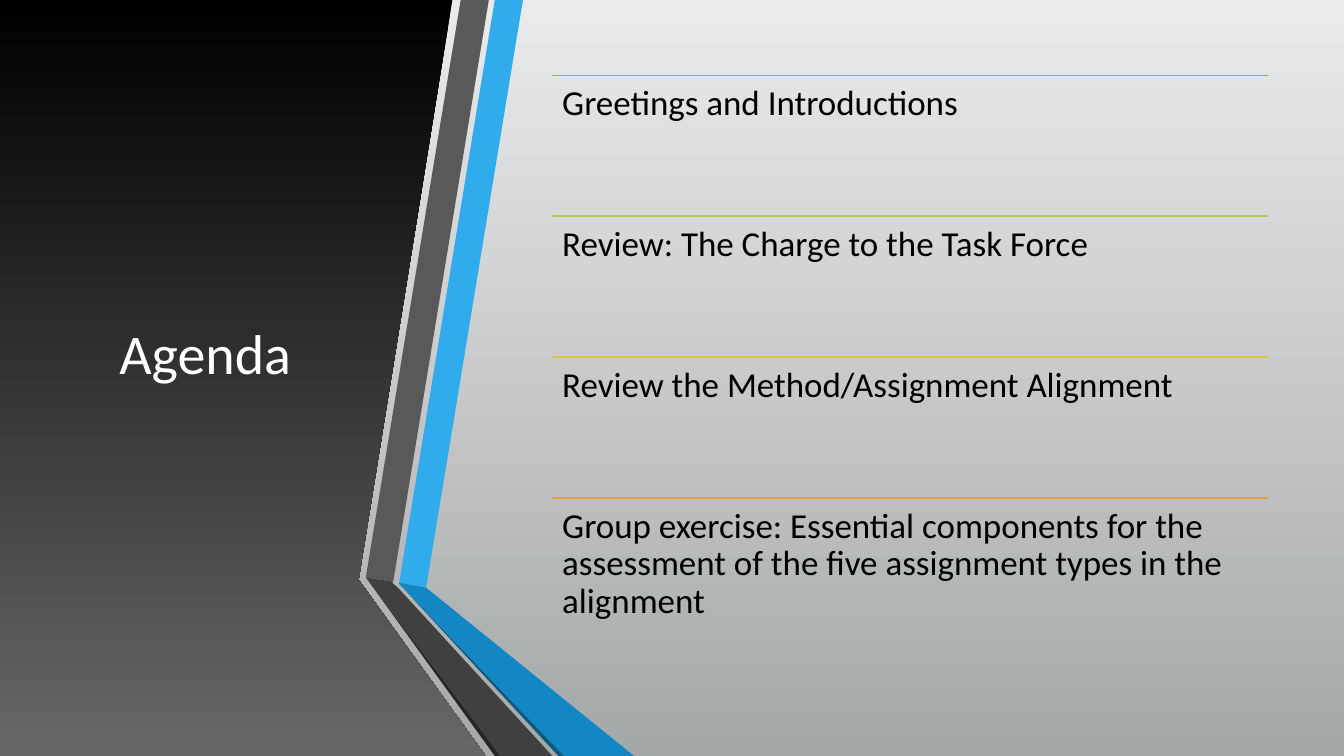
from dataclasses import dataclass

from lxml import etree
from pptx import Presentation
from pptx.dml.color import RGBColor
from pptx.dml.fill import FillFormat
from pptx.enum.shapes import MSO_CONNECTOR, MSO_SHAPE
from pptx.enum.text import MSO_ANCHOR, PP_ALIGN
from pptx.oxml.ns import qn
from pptx.shapes.autoshape import Shape
from pptx.shapes.shapetree import GroupShapes, SlideShapes
from pptx.util import Cm, Pt

STRAIGHT = MSO_CONNECTOR.STRAIGHT
RECTANGLE = MSO_SHAPE.RECTANGLE
TOP, MIDDLE = MSO_ANCHOR.TOP, MSO_ANCHOR.MIDDLE
LEFT, CENTER = PP_ALIGN.LEFT, PP_ALIGN.CENTER

BLACK = RGBColor(0x00, 0x00, 0x00)
WHITE = RGBColor(0xFF, 0xFF, 0xFF)
PANEL_GRAY = RGBColor(0x67, 0x67, 0x67)
BACKGROUND_LIGHT = RGBColor(0xE9, 0xEA, 0xEB)
BACKGROUND_DARK = RGBColor(0xA5, 0xA8, 0xA9)
BLUE = RGBColor(0x30, 0xAC, 0xEC)
BLUE_FOLD = RGBColor(0x12, 0x87, 0xC3)
BLUE_SHADE = RGBColor(0x0C, 0x5A, 0x82)
GRAY = RGBColor(0x59, 0x59, 0x59)
GRAY_FOLD = RGBColor(0x40, 0x40, 0x40)
GRAY_SHADE = RGBColor(0x26, 0x26, 0x26)
GREEN = RGBColor(0x80, 0xC3, 0x4F)
LIME = RGBColor(0xAD, 0xCE, 0x49)
YELLOW = RGBColor(0xD8, 0xCB, 0x43)
ORANGE = RGBColor(0xE2, 0x9D, 0x3E)

# All lengths below are in centimetres
SLIDE_WIDTH, SLIDE_HEIGHT = 33.87, 19.05
AGENDA_LEFT, AGENDA_TOP, AGENDA_WIDTH = 13.92, 1.9, 18.03
ROW_HEIGHT = 3.55

Points = list[tuple[float, float]]


@dataclass
class Ribbon:
    color: RGBColor
    points: Points


@dataclass
class AgendaItem:
    text: str
    color: RGBColor


@dataclass
class TextStyle:
    size: float
    color: RGBColor
    alignment: PP_ALIGN
    anchor: MSO_ANCHOR
    line_spacing: float


PANEL: Points = [(0, 0), (11.4, 0), (9.04, 14.61), (12.24, SLIDE_HEIGHT), (0, SLIDE_HEIGHT)]

RIBBONS = [
    Ribbon(BLUE, [(10.06, 14.68), (10.74, 14.81), (13.18, 0), (12.47, 0)]),
    Ribbon(GRAY, [(12.32, 0), (11.61, 0), (9.22, 14.55), (9.91, 14.66)]),
    Ribbon(GRAY_SHADE, [(9.22, 14.55), (12.47, SLIDE_HEIGHT), (12.62, SLIDE_HEIGHT)]),
    Ribbon(BLUE_SHADE, [(10.06, 14.71), (14.07, SLIDE_HEIGHT), (14.22, SLIDE_HEIGHT)]),
    Ribbon(BLUE_FOLD, [(10.06, 14.71), (14.22, SLIDE_HEIGHT), (15.98, SLIDE_HEIGHT),
                       (10.74, 14.81), (10.06, 14.68)]),
    Ribbon(GRAY_FOLD, [(13.92, SLIDE_HEIGHT), (10.03, 14.81), (9.88, 14.68),
                       (9.91, 14.66), (9.22, 14.55), (12.62, SLIDE_HEIGHT)]),
]

AGENDA = [
    AgendaItem("Greetings and Introductions", GREEN),
    AgendaItem("Review: The Charge to the Task Force", LIME),
    AgendaItem("Review the Method/Assignment Alignment", YELLOW),
    AgendaItem("Group exercise: Essential components for the assessment "
               "of the five assignment types in the alignment", ORANGE),
]

TITLE_STYLE = TextStyle(40, WHITE, CENTER, MIDDLE, 0.9)
ITEM_STYLE = TextStyle(25, BLACK, LEFT, TOP, 0.9)


def set_vertical_gradient(fill: FillFormat, top: RGBColor, bottom: RGBColor) -> None:
    fill.gradient()
    fill.gradient_angle = 270
    for stop, color in zip(fill.gradient_stops, (top, bottom)):
        stop.color.rgb = color


def add_outline(shapes: SlideShapes | GroupShapes, points: Points) -> Shape:
    start, *others = [(Cm(x), Cm(y)) for x, y in points]
    builder = shapes.build_freeform(*start)
    builder.add_line_segments(others, close=True)
    shape = builder.convert_to_shape()
    shape.shadow.inherit = False
    shape.line.fill.background()
    return shape


def add_text(shapes: SlideShapes, text: str, box: tuple[float, float, float, float],
             style: TextStyle) -> None:
    frame = shapes.add_textbox(*map(Cm, box)).text_frame
    paragraph = frame.paragraphs[0]
    run = paragraph.add_run()
    run.text = text
    run.font.color.rgb = style.color
    margins = dict.fromkeys(("margin_left", "margin_top", "margin_right", "margin_bottom"), Cm(0.25))
    formats = {
        frame: {"word_wrap": True, "vertical_anchor": style.anchor, **margins},
        paragraph: {"alignment": style.alignment, "line_spacing": style.line_spacing},
        run.font: {"name": "Calibri", "size": Pt(style.size)},
    }
    for target, values in formats.items():
        for name, value in values.items():
            setattr(target, name, value)


def add_agenda_item(shapes: SlideShapes, item: AgendaItem, top: float) -> None:
    right = AGENDA_LEFT + AGENDA_WIDTH
    rule = shapes.add_connector(STRAIGHT, Cm(AGENDA_LEFT), Cm(top), Cm(right), Cm(top))
    rule.line.color.rgb = item.color
    rule.line.width = Pt(1.25)
    etree.SubElement(rule._element.spPr, qn("a:effectLst"))
    add_text(shapes, item.text, (AGENDA_LEFT, top, AGENDA_WIDTH, ROW_HEIGHT), ITEM_STYLE)


def main() -> None:
    presentation = Presentation()
    presentation.slide_width = Cm(SLIDE_WIDTH)
    presentation.slide_height = Cm(SLIDE_HEIGHT)
    slide = presentation.slides.add_slide(presentation.slide_layouts[6])
    shapes = slide.shapes

    # Background and its covering rectangle
    backdrop = shapes.add_shape(RECTANGLE, 0, 0, Cm(SLIDE_WIDTH), Cm(SLIDE_HEIGHT))
    backdrop.shadow.inherit = False
    backdrop.line.fill.background()
    for fill in (slide.background.fill, backdrop.fill):
        set_vertical_gradient(fill, BACKGROUND_LIGHT, BACKGROUND_DARK)

    # Dark panel with the title
    panel = add_outline(shapes, PANEL)
    set_vertical_gradient(panel.fill, BLACK, PANEL_GRAY)
    add_text(shapes, "Agenda", (1.5, 1.9, 7.34, 14.17), TITLE_STYLE)

    # Folded ribbons
    ribbon_group = shapes.add_group_shape()
    for ribbon in RIBBONS:
        shape = add_outline(ribbon_group.shapes, ribbon.points)
        shape.fill.solid()
        shape.fill.fore_color.rgb = ribbon.color

    # Agenda rows
    for index, item in enumerate(AGENDA):
        add_agenda_item(shapes, item, AGENDA_TOP + index * ROW_HEIGHT)

    presentation.save("out.pptx")


if __name__ == "__main__":
    main()
